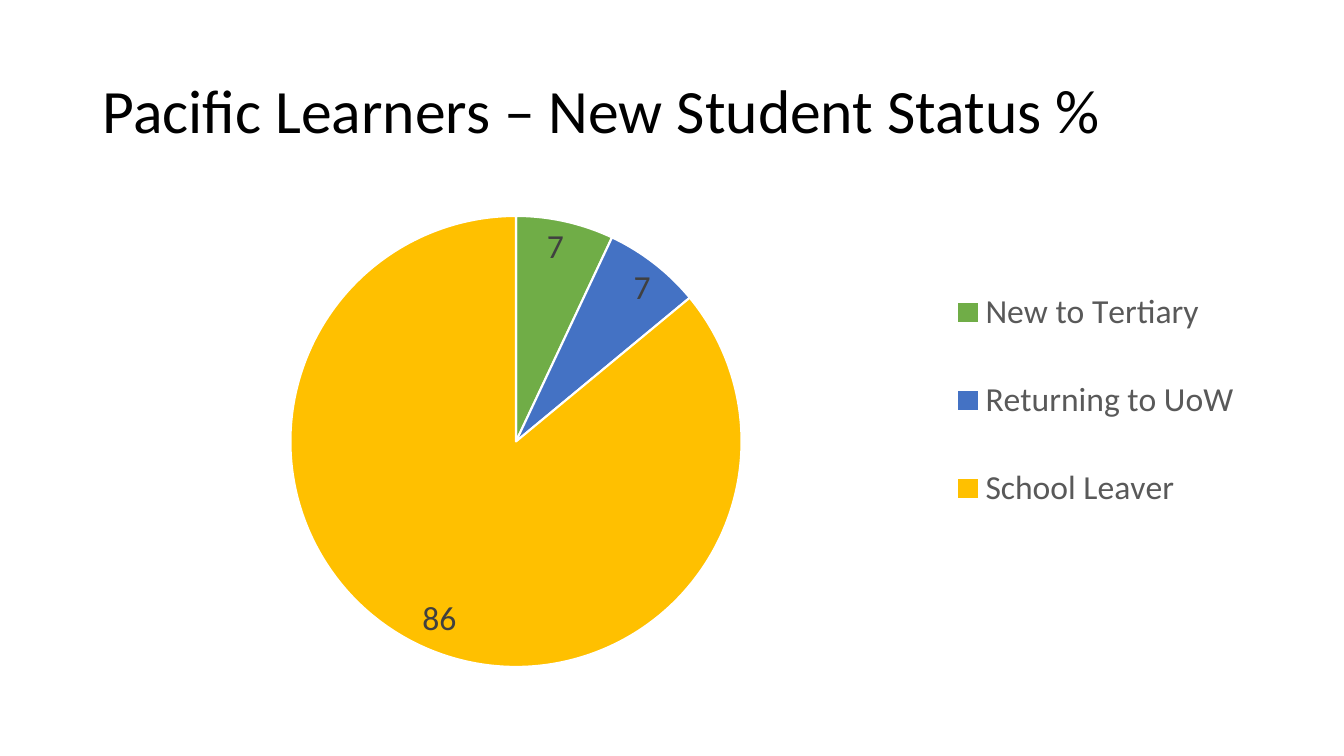
from lxml import etree
from pptx import Presentation
from pptx.chart.data import CategoryChartData
from pptx.dml.color import RGBColor
from pptx.enum.chart import XL_CHART_TYPE, XL_LABEL_POSITION, XL_LEGEND_POSITION
from pptx.enum.text import MSO_ANCHOR
from pptx.oxml.ns import qn
from pptx.util import Inches, Pt

PIE = XL_CHART_TYPE.PIE
INSIDE_END = XL_LABEL_POSITION.INSIDE_END
RIGHT = XL_LEGEND_POSITION.RIGHT
MIDDLE = MSO_ANCHOR.MIDDLE

STATUSES = [
    ("New to Tertiary", 7, "70AD47"),
    ("Returning to UoW", 7, "4472C4"),
    ("School Leaver", 86, "FFC000"),
]


def set_font(font, size, color):
    font.name = "Calibri"
    font.size = Pt(size)
    font.color.rgb = RGBColor.from_string(color)


def manual_layout(is_plot, **box):
    """Return a c:layout with its x, y, w and h as fractions of the chart."""
    layout = etree.Element(qn("c:layout"))
    manual = etree.SubElement(layout, qn("c:manualLayout"))
    if is_plot:
        etree.SubElement(manual, qn("c:layoutTarget")).set("val", "inner")
    for mode in ("xMode", "yMode"):
        etree.SubElement(manual, qn(f"c:{mode}")).set("val", "edge")
    for side, fraction in box.items():
        etree.SubElement(manual, qn(f"c:{side}")).set("val", str(fraction))
    return layout


prs = Presentation()
prs.slide_width = Inches(13.33)
prs.slide_height = Inches(7.5)
slide = prs.slides.add_slide(prs.slide_layouts[6])

# Title
title = slide.shapes.add_textbox(Inches(0.92), Inches(0.4), Inches(11.5), Inches(1.45))
title.text_frame.word_wrap = True
title.text_frame.vertical_anchor = MIDDLE
heading = title.text_frame.paragraphs[0]
heading.text = "Pacific Learners – New Student Status %"
heading.line_spacing = 0.9
set_font(heading.font, 44, "000000")

# Pie of student status
status_data = CategoryChartData(number_format="0")
status_data.categories = [name for name, _, _ in STATUSES]
status_data.add_series("Series 1", [share for _, share, _ in STATUSES])
chart = slide.shapes.add_chart(
    PIE, Inches(0.92), Inches(2), Inches(11.5), Inches(4.76), status_data
).chart
set_font(chart.font, 10, "000000")
chart.has_title = False

pie = chart.plots[0]
pie.vary_by_categories = True
for index, (_, _, color) in enumerate(STATUSES):
    slice_format = pie.series[0].points[index].format
    slice_format.fill.solid()
    slice_format.fill.fore_color.rgb = RGBColor.from_string(color)
    slice_format.line.color.rgb = RGBColor.from_string("FFFFFF")
    slice_format.line.width = Pt(1.5)

pie.has_data_labels = True
labels = pie.data_labels
labels.show_value = True
labels.number_format = "0"
labels.number_format_is_linked = False
labels.position = INSIDE_END
set_font(labels.font, 24, "404040")

chart.has_legend = True
legend = chart.legend
legend.position = RIGHT
legend.include_in_layout = False
set_font(legend.font, 24, "595959")

# Places of the pie and its legend
plot_area = chart.element.find(".//" + qn("c:plotArea"))
for automatic in plot_area.findall(qn("c:layout")):
    plot_area.remove(automatic)
plot_area.insert(0, manual_layout(True, x=0.17, y=0.03, w=0.39, h=0.94))

legend_box = chart.element.find(".//" + qn("c:legend"))
for automatic in legend_box.findall(qn("c:layout")):
    legend_box.remove(automatic)
legend_box.find(qn("c:legendPos")).addnext(
    manual_layout(False, x=0.74, y=0.09, w=0.25, h=0.65)
)

prs.save("out.pptx")
